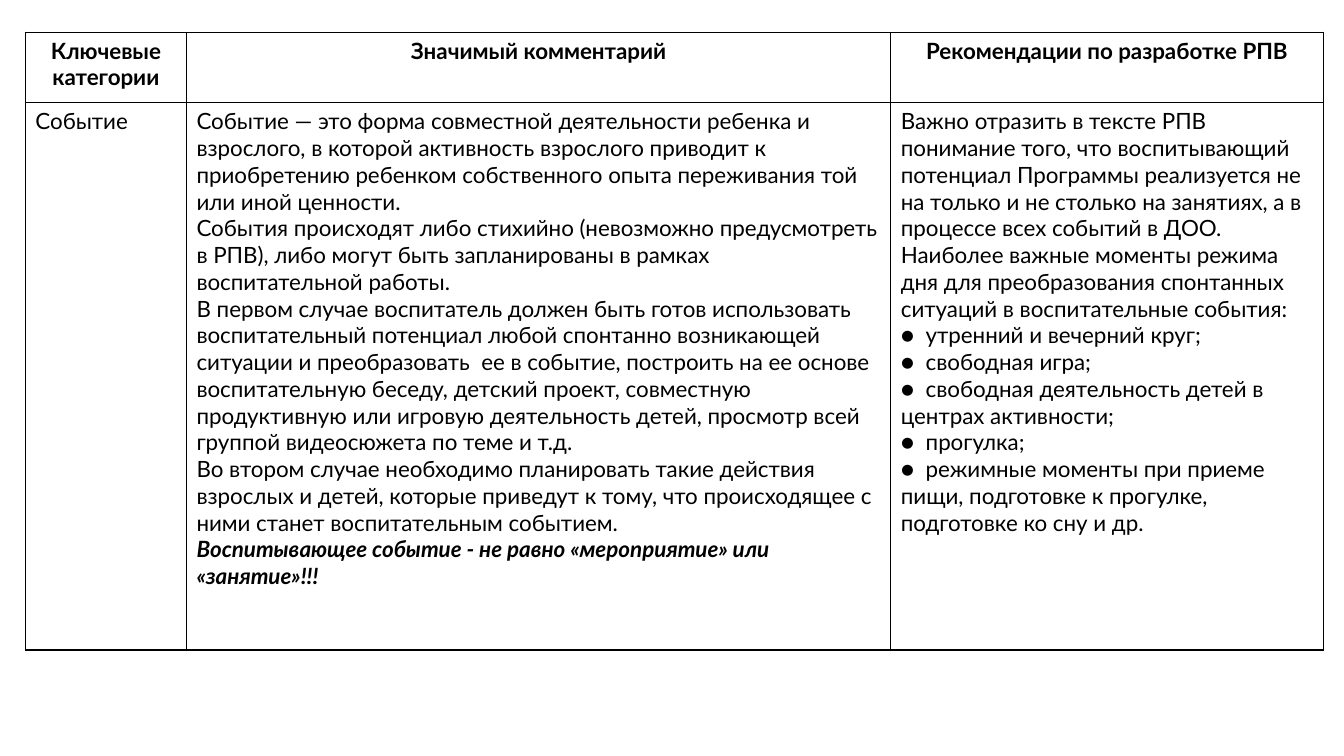
import pptx
import pptx.util
import pptx.dml.color
import pptx.enum.text
import pptx.oxml
import pptx.oxml.ns
from pptx.util import Cm

BLACK = pptx.dml.color.RGBColor(0, 0, 0)
FONT = "Lato"
SIZE = pptx.util.Pt(16)
COLS = (4.06, 17.75, 10.9)
ROWS = (1.78, 13.79)
HEADS = ("Ключевые категории", "Значимый комментарий", "Рекомендации по разработке РПВ")
NOTES = (
    "Событие — это форма совместной деятельности ребенка и взрослого, в которой активность "
    "взрослого приводит к приобретению ребенком собственного опыта переживания той или иной ценности.",
    "События происходят либо стихийно (невозможно предусмотреть в РПВ), либо могут быть "
    "запланированы в рамках воспитательной работы.",
    "В первом случае воспитатель должен быть готов использовать воспитательный потенциал любой "
    "спонтанно возникающей ситуации и преобразовать  ее в событие, построить на ее основе "
    "воспитательную беседу, детский проект, совместную продуктивную или игровую деятельность "
    "детей, просмотр всей группой видеосюжета по теме и т.д.",
    "Во втором случае необходимо планировать такие действия взрослых и детей, которые приведут "
    "к тому, что происходящее с ними станет воспитательным событием.",
    "Воспитывающее событие - не равно «мероприятие» или «занятие»!!!",
)
TIPS = (
    "Важно отразить в тексте РПВ понимание того, что воспитывающий потенциал Программы "
    "реализуется не на только и не столько на занятиях, а в процессе всех событий в ДОО.",
    "Наиболее важные моменты режима дня для преобразования спонтанных ситуаций в "
    "воспитательные события:",
    "●  утренний и вечерний круг;",
    "●  свободная игра;",
    "●  свободная деятельность детей в центрах активности;",
    "●  прогулка;",
    "●  режимные моменты при приеме пищи, подготовке к прогулке, подготовке ко сну и др.",
)
BODY = ("Событие", "\n".join(NOTES), "\n".join(TIPS))


def frame(cell):
    """Draw thin black borders around a cell and clear its fill."""
    props = cell._tc.get_or_add_tcPr()
    for side in ("lnL", "lnR", "lnT", "lnB"):
        props.append(pptx.oxml.parse_xml(
            f'<a:{side} {pptx.oxml.ns.nsdecls("a")} w="12700"><a:solidFill>'
            f'<a:srgbClr val="{BLACK}"/></a:solidFill></a:{side}>'))
    cell.fill.background()


def write(cell, text, head):
    """Put text in a cell, centred and bold for a heading."""
    cell.text_frame.text = text
    for para in cell.text_frame.paragraphs:
        para.alignment = pptx.enum.text.PP_ALIGN.CENTER if head else pptx.enum.text.PP_ALIGN.LEFT
        for run in para.runs:
            run.font.name = FONT
            run.font.size = SIZE
            run.font.bold = head
            run.font.color.rgb = BLACK


def add_grid(slide, left, top):
    """Place the table of categories at the given corner."""
    grid = slide.shapes.add_table(
        len(ROWS), len(COLS), Cm(left), Cm(top), Cm(sum(COLS)), Cm(sum(ROWS))).table
    grid.first_row = grid.horz_banding = False
    for col, width in zip(grid.columns, COLS):
        col.width = Cm(width)
    for row, height, texts in zip(grid.rows, ROWS, (HEADS, BODY)):
        row.height = Cm(height)
        for cell, text in zip(row.cells, texts):
            frame(cell)
            write(cell, text, texts is HEADS)
    last = grid.cell(1, 1).text_frame.paragraphs[-1]
    for run in last.runs:
        run.font.bold = run.font.italic = True


def main():
    """Build and save the slide."""
    deck = pptx.Presentation()
    deck.slide_width, deck.slide_height = Cm(33.87), Cm(19.05)
    slide = deck.slides.add_slide(deck.slide_layouts[6])
    add_grid(slide, 0.64, 0.81)
    deck.save("out.pptx")


if __name__ == "__main__":
    main()
